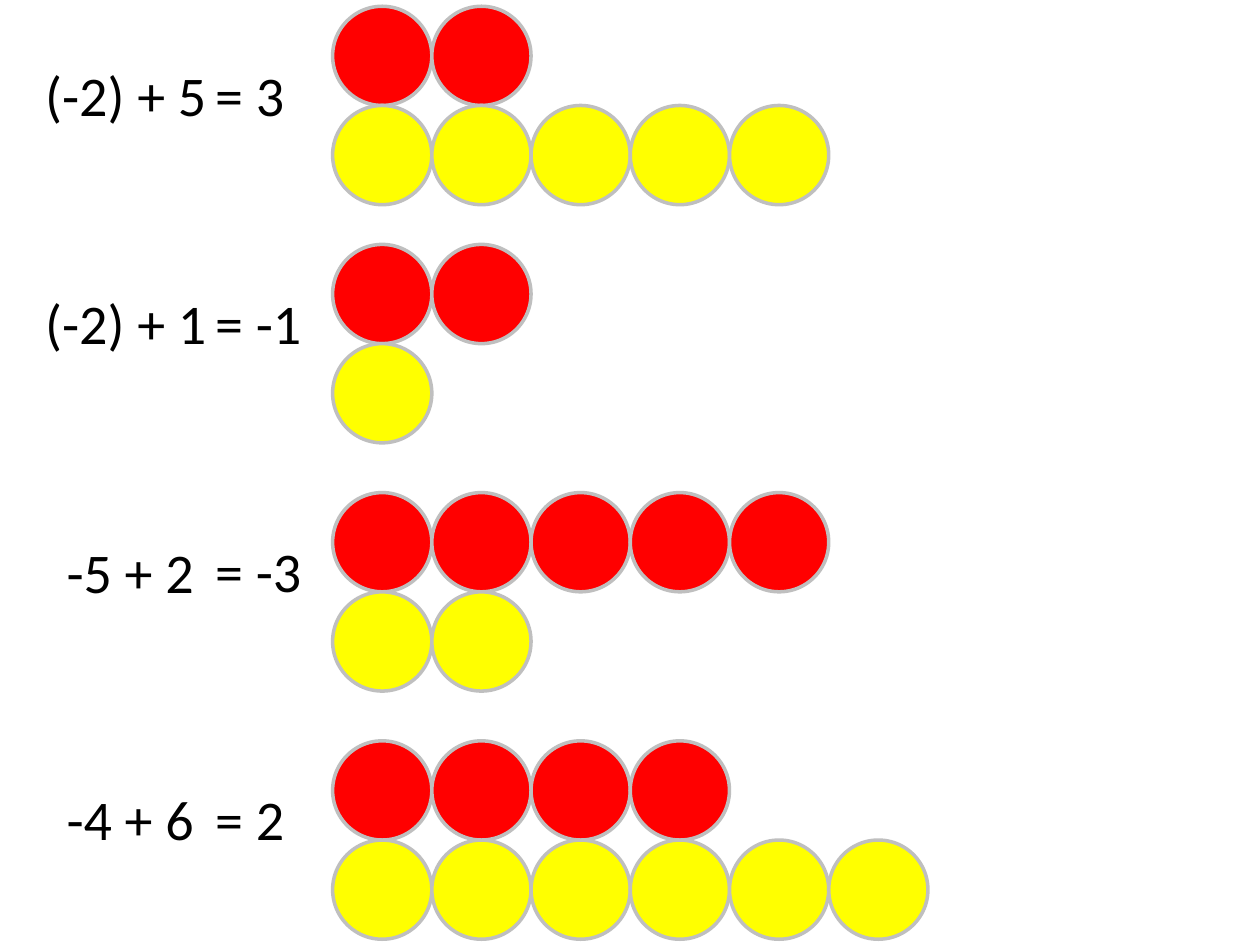
from pptx import Presentation
from pptx.dml.color import RGBColor
from pptx.enum.shapes import MSO_SHAPE
from pptx.enum.text import MSO_AUTO_SIZE
from pptx.util import Inches, Pt

OVAL = MSO_SHAPE.OVAL
GROW = MSO_AUTO_SIZE.SHAPE_TO_FIT_TEXT

# Sum, its left and top; answer and its top; counter top; red and yellow counts
SUMS = [
    ("(-2) + 5", 0.26, 0.43, "= 3", 0.43, 0.05, 2, 5),
    ("(-2) + 1", 0.26, 2.24, "= -1", 2.24, 1.94, 2, 1),
    ("-5 + 2", 0.43, 4.22, "= -3", 4.21, 3.91, 5, 2),
    ("-4 + 6", 0.43, 6.18, "= 2", 6.18, 5.88, 4, 6),
]
RED, YELLOW, GREY, BLACK = "FF0000", "FFFF00", "BFBFBF", "000000"
SIZE = 0.7875  # counter diameter, also the step between counters
START = 2.64
ANSWER = 1.61


def color(code):
    return RGBColor.from_string(code)


def add_text(slide, text, left, top):
    box = slide.shapes.add_textbox(
        Inches(left), Inches(top), Inches(1.65), Inches(0.64))
    frame = box.text_frame
    frame.word_wrap = True
    frame.auto_size = GROW
    frame.text = text
    font = frame.paragraphs[0].runs[0].font
    font.name = "Calibri"
    font.size = Pt(32)
    font.color.rgb = color(BLACK)


def add_row(group, count, top, fill):
    for i in range(count):
        disc = group.shapes.add_shape(
            OVAL, Inches(START + i * SIZE), Inches(top),
            Inches(SIZE), Inches(SIZE))
        disc.shadow.inherit = False
        disc.fill.solid()
        disc.fill.fore_color.rgb = color(fill)
        disc.line.color.rgb = color(GREY)
        disc.line.width = Pt(2)


def main():
    deck = Presentation()
    deck.slide_width, deck.slide_height = Inches(10), Inches(7.5)
    slide = deck.slides.add_slide(deck.slide_layouts[6])

    for sum_text, left, top, answer, answer_top, disc_top, reds, yellows in SUMS:
        # Equation
        add_text(slide, sum_text, left, top)
        add_text(slide, answer, ANSWER, answer_top)
        # Counters: negatives above positives
        group = slide.shapes.add_group_shape()
        add_row(group, reds, disc_top, RED)
        add_row(group, yellows, disc_top + SIZE, YELLOW)

    deck.save("out.pptx")


if __name__ == "__main__":
    main()
